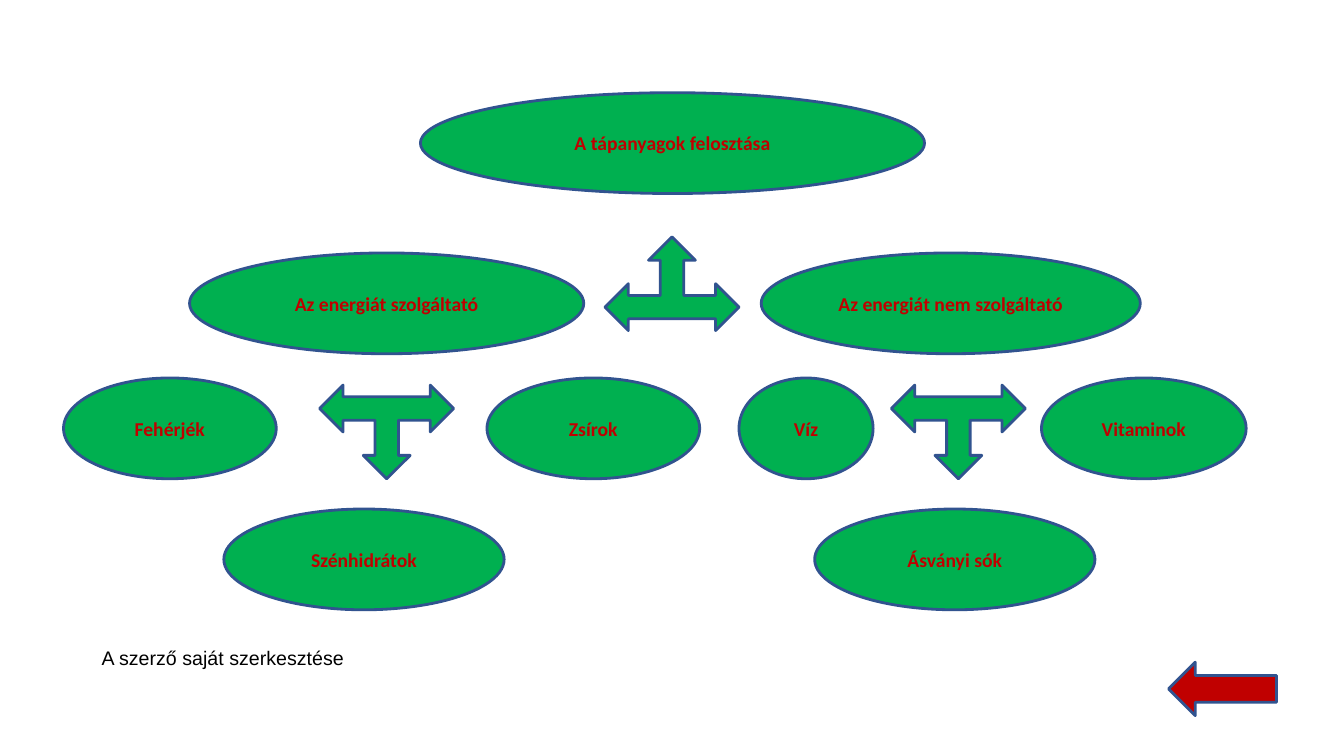
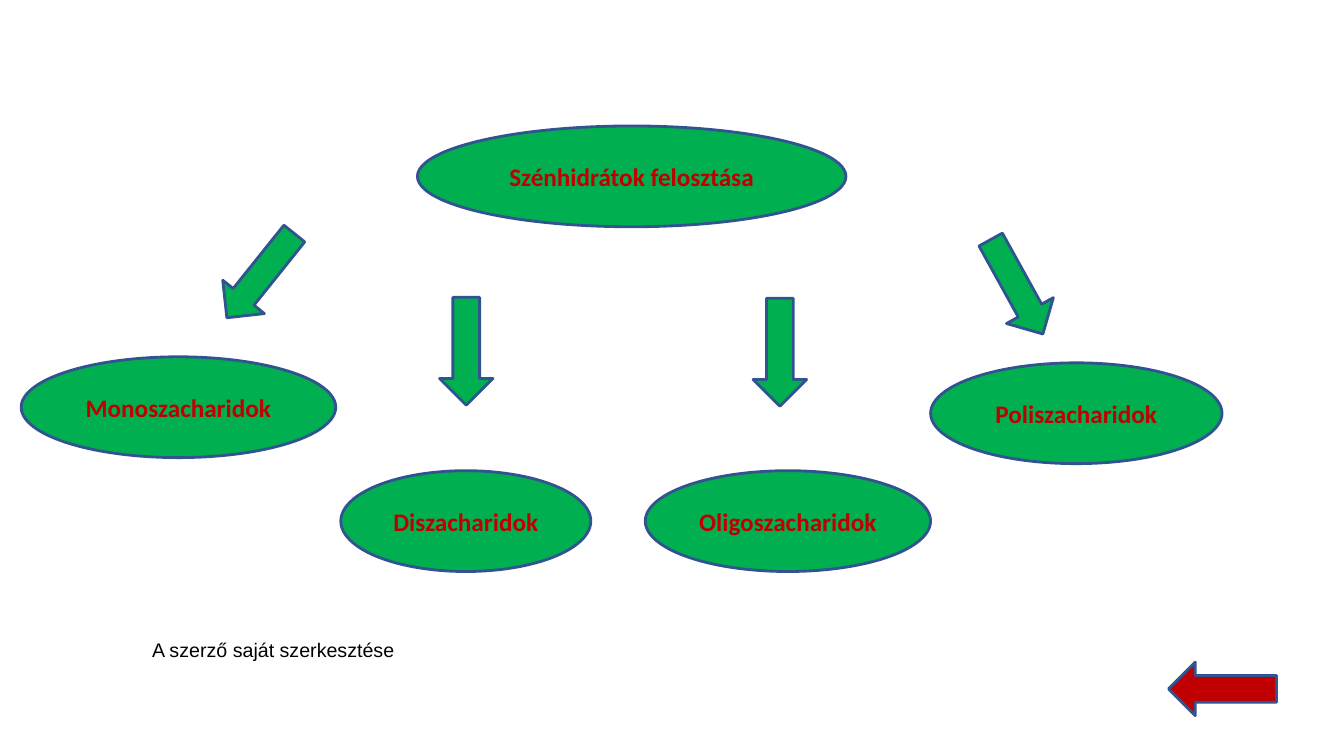
import dataclasses

import pptx
import pptx.dml.color
import pptx.enum.shapes
import pptx.enum.text
import pptx.util

Inches = pptx.util.Inches
Pt = pptx.util.Pt
SHAPE = pptx.enum.shapes.MSO_SHAPE
ALIGN = pptx.enum.text.PP_ALIGN
ANCHOR = pptx.enum.text.MSO_ANCHOR


@dataclasses.dataclass(frozen=True)
class Theme:
    green: str = "00B050"
    red: str = "C00000"
    outline: str = "31538F"
    black: str = "000000"
    line_width: float = 2
    small: int = 14
    large: int = 18
    label_font: str = "Calibri"
    credit_font: str = "Arial"
    oval_height: float = 1
    arrow_length: float = 1.07
    arrow_width: float = 0.53
    branch_width: float = 1.33
    branch_height: float = 0.93


THEME = Theme()
CREDIT = "A szerző saját szerkesztése"


def rgb(value):
    return pptx.dml.color.RGBColor.from_string(value)


def set_text(tf, text, *, size, font, color, bold=False,
             align=ALIGN.LEFT, anchor=ANCHOR.TOP):
    tf.word_wrap = True
    tf.vertical_anchor = anchor
    p = tf.paragraphs[0]
    p.alignment = align
    r = p.add_run()
    r.text = text
    r.font.size = Pt(size)
    r.font.name = font
    r.font.bold = bold
    r.font.color.rgb = rgb(color)


def add_figure(slide, kind, left, top, width, height, fill=THEME.green, rotation=0):
    sp = slide.shapes.add_shape(
        kind, Inches(left), Inches(top), Inches(width), Inches(height))
    sp.shadow.inherit = False
    sp.fill.solid()
    sp.fill.fore_color.rgb = rgb(fill)
    sp.line.color.rgb = rgb(THEME.outline)
    sp.line.width = Pt(THEME.line_width)
    sp.rotation = rotation
    return sp


def add_oval(slide, text, left, top, width, size):
    sp = add_figure(slide, SHAPE.OVAL, left, top, width, THEME.oval_height)
    set_text(sp.text_frame, text, size=size, font=THEME.label_font, color=THEME.red,
             bold=True, align=ALIGN.CENTER, anchor=ANCHOR.MIDDLE)


def add_branch(slide, left, top, rotation=0):
    add_figure(slide, SHAPE.LEFT_RIGHT_UP_ARROW, left, top,
               THEME.branch_width, THEME.branch_height, rotation=rotation)


def add_down_arrow(slide, left, top, rotation=0):
    add_figure(slide, SHAPE.DOWN_ARROW, left, top,
               THEME.arrow_width, THEME.arrow_length, rotation=rotation)


def add_footer(slide, left, top, height):
    sp = slide.shapes.add_textbox(
        Inches(left), Inches(top), Inches(2.63), Inches(height))
    set_text(sp.text_frame, CREDIT, size=THEME.small, font=THEME.credit_font,
             color=THEME.black)
    add_figure(slide, SHAPE.LEFT_ARROW, 11.59, 6.57,
               THEME.arrow_length, THEME.arrow_width, fill=THEME.red)


def add_slide(prs):
    return prs.slides.add_slide(prs.slide_layouts[6])


def build_nutrients(prs):
    slide = add_slide(prs)
    rows = (
        (0.92, (("A tápanyagok felosztása", 4.17, 5),)),
        (2.51, (("Az energiát szolgáltató", 1.88, 3.91),
                ("Az energiát nem szolgáltató", 7.55, 3.76))),
        (3.75, (("Fehérjék", 0.63, 2.11), ("Zsírok", 4.83, 2.11),
                ("Víz", 7.33, 1.33), ("Vitaminok", 10.33, 2.03))),
        (5.05, (("Szénhidrátok", 2.22, 2.78), ("Ásványi sók", 8.08, 2.78))),
    )
    for top, ovals in rows:
        for text, left, width in ovals:
            add_oval(slide, text, left, top, width, THEME.small)
    add_branch(slide, 6, 2.35)
    for left in (3.17, 8.84):
        add_branch(slide, left, 3.82, rotation=180)
    add_footer(slide, 0.91, 6.36, 0.34)


def build_carbohydrates(prs):
    slide = add_slide(prs)
    for text, left, top, width in (
        ("Szénhidrátok felosztása", 4.14, 1.25, 4.25),
        ("Monoszacharidok", 0.21, 3.54, 3.12),
        ("Diszacharidok", 3.38, 4.67, 2.48),
        ("Oligoszacharidok", 6.4, 4.67, 2.83),
        ("Poliszacharidok", 9.23, 3.6, 2.89),
    ):
        add_oval(slide, text, left, top, width, THEME.large)
    for left, top, rotation in (
        (2.32, 2.2, 38.7), (4.36, 2.95, 0), (7.47, 2.96, 0), (9.82, 2.31, 331.1),
    ):
        add_down_arrow(slide, left, top, rotation)
    add_footer(slide, 1.41, 6.28, 0.57)


def main():
    prs = pptx.Presentation()
    prs.slide_width = Inches(13.33)
    prs.slide_height = Inches(7.5)
    build_nutrients(prs)
    build_carbohydrates(prs)
    prs.save("out.pptx")


if __name__ == "__main__":
    main()
